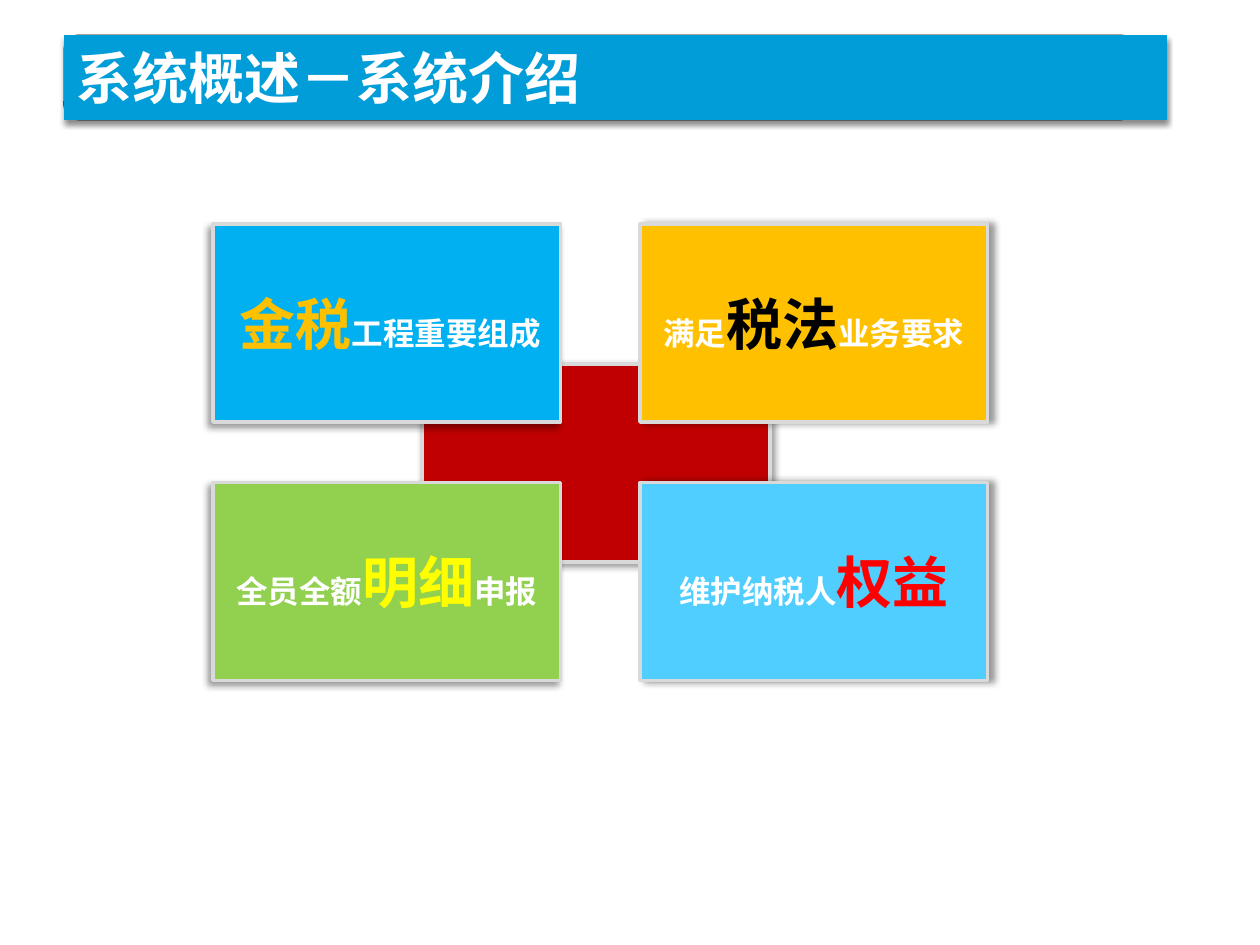
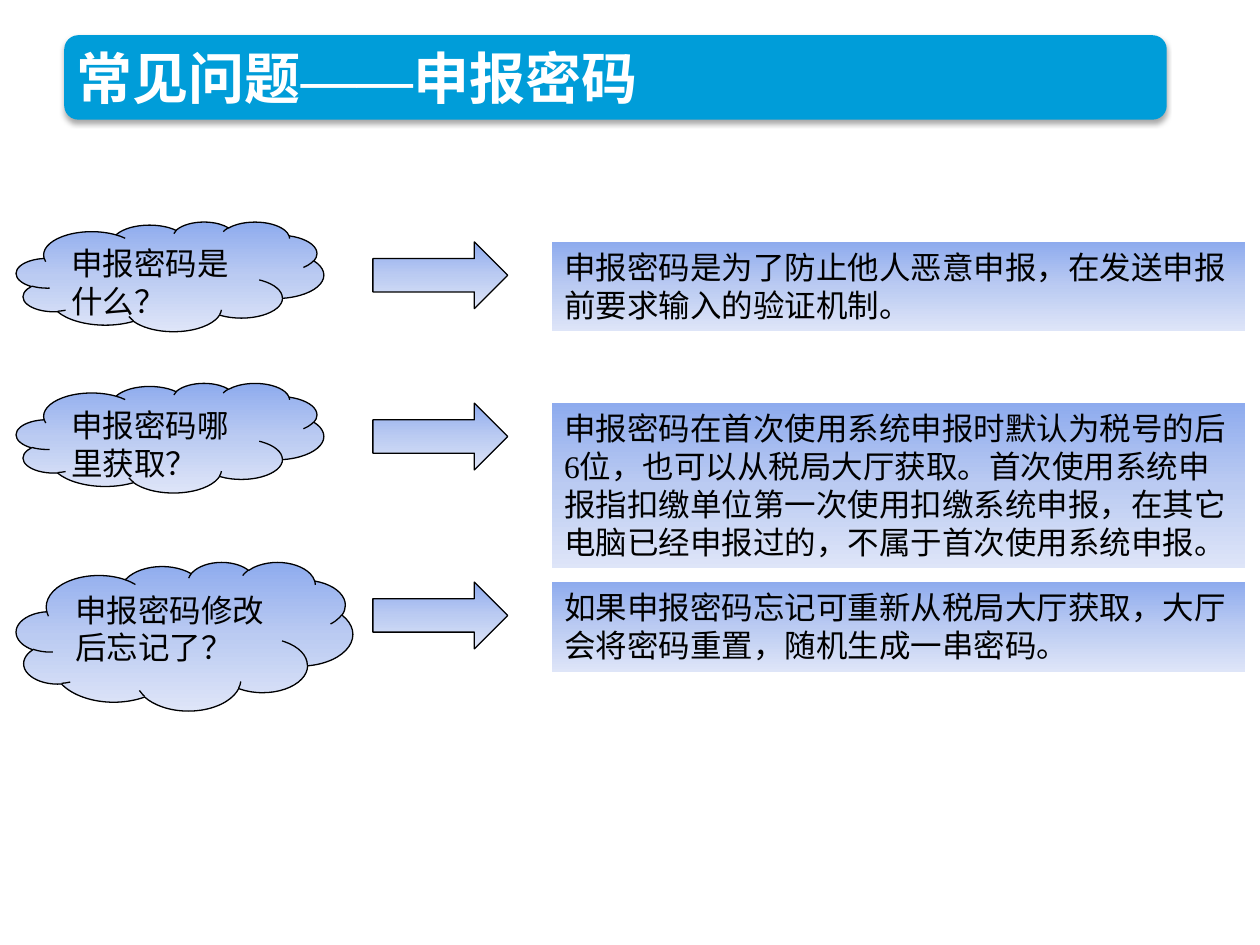
from copy import deepcopy

from pptx import Presentation
from pptx import util as u
from pptx.dml.color import RGBColor
from pptx.enum import shapes, text
from pptx.oxml.ns import qn
from pptx.oxml.xmlchemy import OxmlElement

SHAPE = shapes.MSO_SHAPE
SANS, SERIF = "Noto Sans CJK SC", "Times New Roman"
HUES = {
    "band": "009DD9", "back": "0F6FC6", "white": "FFFFFF", "black": "000000",
    "edge": "D9D9D9", "core": "C00000", "blue": "00B0F0", "gold": "FFC000",
    "green": "92D050", "sky": "4FCEFF", "yellow": "FFFF00", "red": "FF0000",
}
FADE = [(0, "8EABEE"), (0.5, "BBCBF2"), (1, "DEE5F8")]
BAND = (0.51, 0.28, 8.75, 0.67)
TILE = (2.76, 1.57)
TILE_LEFT, TILE_TOP = 1.69, 1.78
TILE_STEP = (3.39, 2.05)


def rgb(hue):
    return RGBColor.from_string(HUES.get(hue, hue))


def add_shape(slide, kind, box, fill=None, line=None, width=0.75):
    """Add a preset shape with a plain fill, or the shared fade if none is given."""
    shape = slide.shapes.add_shape(kind, *(u.Inches(n) for n in box))
    shape.shadow.inherit = False
    if fill:
        shape.fill.solid()
        shape.fill.fore_color.rgb = rgb(fill)
    else:
        add_fade(shape)
    if line:
        shape.line.color.rgb = rgb(line)
        shape.line.width = u.Pt(width)
    else:
        shape.line.fill.background()
    return shape


def add_fade(shape):
    shape.fill.gradient()
    shape.fill.gradient_angle = 270
    stops = shape._element.spPr.find(".//" + qn("a:gsLst"))
    stops.insert(1, deepcopy(stops[0]))
    for stop, (place, hue) in zip(shape.fill.gradient_stops, FADE):
        stop.position = place
        stop.color.rgb = rgb(hue)


def add_shadow(shape, alpha, blur, gap, angle):
    cast = OxmlElement("a:outerShdw")
    cast.set("blurRad", str(u.Pt(blur)))
    cast.set("dist", str(u.Pt(gap)))
    cast.set("dir", str(angle * 60000))
    cast.set("algn", "ctr")
    cast.set("rotWithShape", "0")
    hue = OxmlElement("a:srgbClr")
    hue.set("val", HUES["black"])
    part = OxmlElement("a:alpha")
    part.set("val", str(alpha * 1000))
    hue.append(part)
    cast.append(hue)
    shape._element.spPr.find(qn("a:effectLst")).append(cast)


def style_run(run, size, hue, face, east, bold):
    run.font.size = u.Pt(size)
    run.font.bold = bold
    run.font.color.rgb = rgb(hue)
    run.font.name = face
    asian = OxmlElement("a:ea")
    asian.set("typeface", east)
    run._r.rPr.find(qn("a:latin")).addnext(asian)


def add_bold(shape, parts, align):
    """Write one bold line from (words, size, hue, face) parts."""
    frame = shape.text_frame
    frame.word_wrap = True
    frame.vertical_anchor = text.MSO_ANCHOR.MIDDLE
    para = frame.paragraphs[0]
    para.alignment = align
    for words, size, hue, face in parts:
        run = para.add_run()
        run.text = words
        style_run(run, size, hue, face, face, True)


def add_body(shape, words):
    frame = shape.text_frame
    frame.word_wrap = True
    frame.vertical_anchor = text.MSO_ANCHOR.TOP
    frame.text = words
    for para in frame.paragraphs:
        para.alignment = text.PP_ALIGN.LEFT
        for run in para.runs:
            style_run(run, 18, "black", SERIF, SANS, False)


def add_title(slide, kind, parts, line=None, gap=2):
    band = add_shape(slide, kind, BAND, "band", line)
    add_shadow(band, 45 if line else 35, 3, gap, 90)
    label = slide.shapes.add_textbox(*(u.Inches(n) for n in BAND))
    add_bold(label, [(words, 32, "white", face) for words, face in parts],
             text.PP_ALIGN.LEFT)


def add_tile(slide, col, row, fill, parts):
    """Add a tile whose key word stands out in a larger size and its own hue."""
    box = (TILE_LEFT + col * TILE_STEP[0], TILE_TOP + row * TILE_STEP[1], *TILE)
    tile = add_shape(slide, SHAPE.RECTANGLE, box, fill, "edge", 2)
    add_shadow(tile, 40, 4, 3, 0 if col else 135)
    add_bold(tile, [(words, 32 if hue else 18, hue or "white", SANS)
                    for words, hue in parts], text.PP_ALIGN.CENTER)


def add_row(slide, top, cloud, ask, tall, reply):
    """Add a question cloud, an arrow and the answer box."""
    puff = add_shape(slide, SHAPE.CLOUD, (0.13, top, *cloud), line="black")
    add_body(puff, ask)
    add_shape(slide, SHAPE.RIGHT_ARROW, (2.96, top + 0.16, 1.07, 0.53), line="black")
    add_body(add_shape(slide, SHAPE.RECTANGLE, (4.38, top + 0.16, 5.5, tall)), reply)


def build_intro(slide):
    add_shape(slide, SHAPE.ROUNDED_RECTANGLE, (0.51, 0.28, 8.5, 0.67), "back", "black")
    add_title(slide, SHAPE.RECTANGLE, [("系统概述－系统介绍", SANS)], "band", 2.4)
    core = add_shape(slide, SHAPE.RECTANGLE, (3.35, 2.89, *TILE), "core", "edge", 2)
    add_shadow(core, 40, 4, 2, 45)
    tiles = [
        ("blue", [(" ", None), ("金税", "gold"), ("工程重要组成", None)]),
        ("gold", [("满足", None), ("税法", "black"), ("业务要求", None)]),
        ("green", [("全员全额", None), ("明细", "yellow"), ("申报", None)]),
        ("sky", [("维护纳税人", None), ("权益", "red")]),
    ]
    for i, (fill, parts) in enumerate(tiles):
        add_tile(slide, i % 2, i // 2, fill, parts)


def build_faq(slide):
    add_title(slide, SHAPE.ROUNDED_RECTANGLE,
              [("常见问题", SANS), ("——", SERIF), ("申报密码", SANS)])
    small, large = (2.44, 0.87), (2.67, 1.18)
    rows = [
        (1.76, small, "申报密码是什么？", 0.71,
         "申报密码是为了防止他人恶意申报，在发送申报\n前要求输入的验证机制。"),
        (3.04, small, "申报密码哪里获取？", 1.31,
         "申报密码在首次使用系统申报时默认为税号的后6位，也可以从税局大厅获取。"
         "首次使用系统申报指扣缴单位第一次使用扣缴系统申报，"
         "在其它电脑已经申报过的，不属于首次使用系统申报。"),
        (4.46, large, "申报密码修改后忘记了？", 0.71,
         "如果申报密码忘记可重新从税局大厅获取，大厅\n会将密码重置，随机生成一串密码。"),
    ]
    for row in rows:
        add_row(slide, *row)


def main():
    deck = Presentation()
    deck.slide_width, deck.slide_height = u.Inches(10), u.Inches(7.5)
    for build in (build_intro, build_faq):
        build(deck.slides.add_slide(deck.slide_layouts[6]))
    deck.save("out.pptx")


if __name__ == "__main__":
    main()
